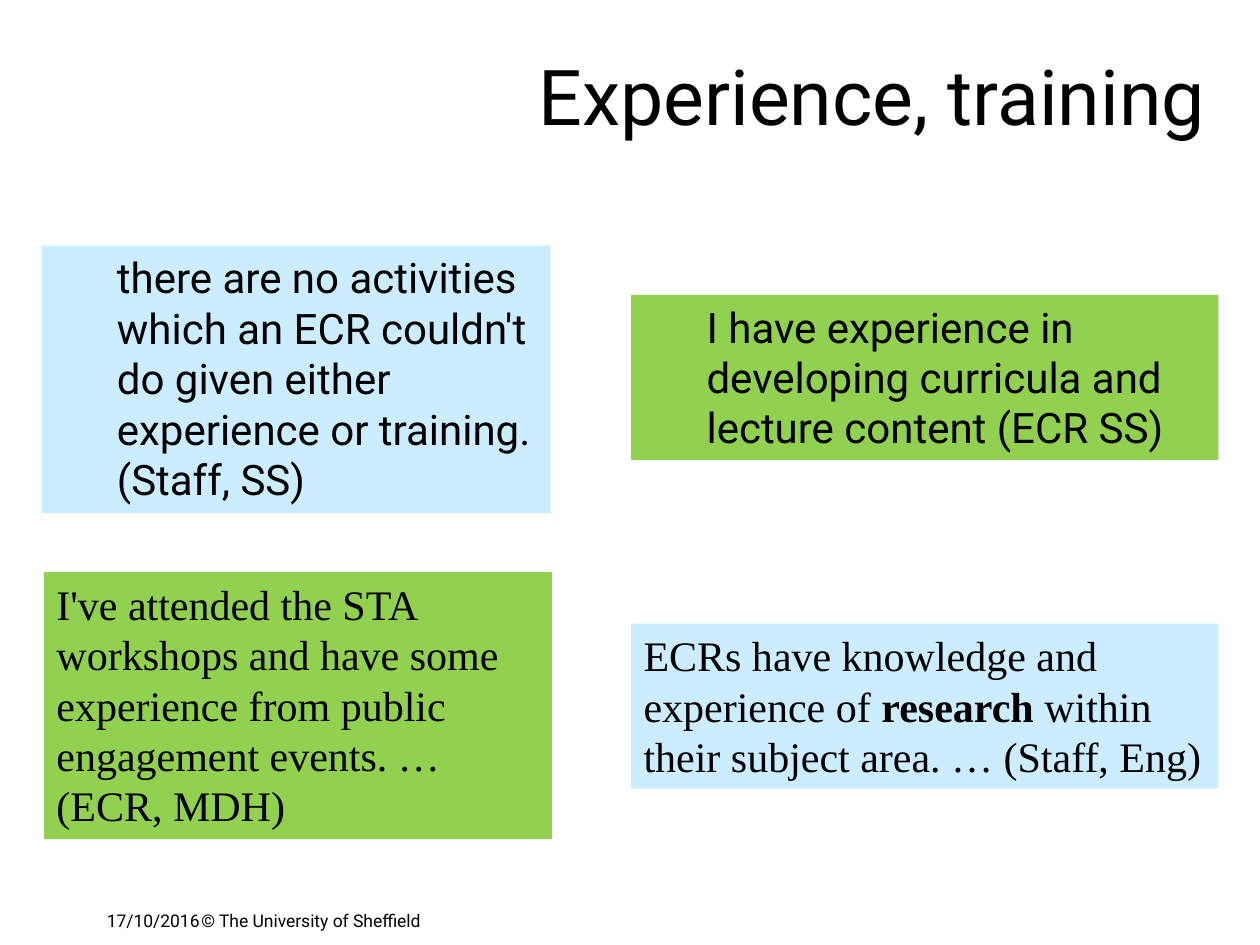
from pptx import Presentation
from pptx.dml.color import RGBColor
from pptx.enum import shapes, text
from pptx.util import Inches, Pt

BLACK = RGBColor(0x00, 0x00, 0x00)
GREEN = RGBColor(0x92, 0xD0, 0x50)
BLUE = RGBColor(0xCC, 0xEC, 0xFF)
SANS = "Roboto"
SERIF = "Times New Roman"


def style_paragraph(paragraph, font_name, size):
    paragraph.font.name = font_name
    paragraph.font.size = Pt(size)
    paragraph.font.color.rgb = BLACK


def add_label(slide, box, wording, size):
    shape = slide.shapes.add_textbox(*map(Inches, box))
    shape.text_frame.word_wrap = True
    paragraph = shape.text_frame.paragraphs[0]
    paragraph.text = wording
    style_paragraph(paragraph, SANS, size)
    return shape


def add_title(slide, box, wording):
    shape = add_label(slide, box, wording, 44)
    shape.text_frame.vertical_anchor = text.MSO_ANCHOR.MIDDLE
    paragraph = shape.text_frame.paragraphs[0]
    paragraph.alignment = text.PP_ALIGN.RIGHT
    paragraph.line_spacing = 0.83


def add_footer(slide, left, top):
    add_label(slide, (left, top, 1, 0.33), "17/10/2016", 10)
    add_label(slide, (left + 0.75, top, 5.67, 0.33), "© The University of Sheffield", 10)


def add_quote(slide, box, fill, font_name, runs, indent=0):
    shape = slide.shapes.add_shape(shapes.MSO_SHAPE.RECTANGLE, *map(Inches, box))
    shape.shadow.inherit = False
    shape.fill.solid()
    shape.fill.fore_color.rgb = fill
    shape.line.fill.background()
    frame = shape.text_frame
    frame.word_wrap = True
    frame.vertical_anchor = text.MSO_ANCHOR.TOP
    paragraph = frame.paragraphs[0]
    paragraph.alignment = text.PP_ALIGN.LEFT
    paragraph.line_spacing = Pt(28.8)
    properties = paragraph._p.get_or_add_pPr()
    properties.set("marL", str(Inches(indent)))
    properties.set("indent", "0")
    style_paragraph(paragraph, font_name, 24)
    for wording, bold in runs:
        run = paragraph.add_run()
        run.text = wording
        if bold:
            run.font.bold = True


def main():
    presentation = Presentation()
    presentation.slide_width = Inches(10)
    presentation.slide_height = Inches(7.5)
    slide = presentation.slides.add_slide(presentation.slide_layouts[6])

    add_title(slide, (0.67, 0.4, 9, 0.83), "Experience, training")
    add_footer(slide, 0.75, 7.17)
    add_quote(slide, (5.01, 2.34, 4.66, 1.31), GREEN, SANS, [
        ("I have experience in developing curricula and lecture content (ECR SS)", False),
    ], indent=0.5)
    add_quote(slide, (0.33, 1.95, 4.04, 2.12), BLUE, SANS, [
        ("there are no activities which an ECR couldn't do given either "
         "experience or training. (Staff, SS)", False),
    ], indent=0.5)
    add_quote(slide, (0.35, 4.54, 4.03, 2.12), GREEN, SERIF, [
        ("I've attended the STA workshops and have some experience from public "
         "engagement events. … (ECR, MDH)", False),
    ])
    add_quote(slide, (5.01, 4.95, 4.66, 1.31), BLUE, SERIF, [
        ("ECRs have knowledge and experience of ", False),
        ("research", True),
        (" within their subject area. … (Staff, Eng)", False),
    ])
    presentation.save("out.pptx")


if __name__ == "__main__":
    main()
